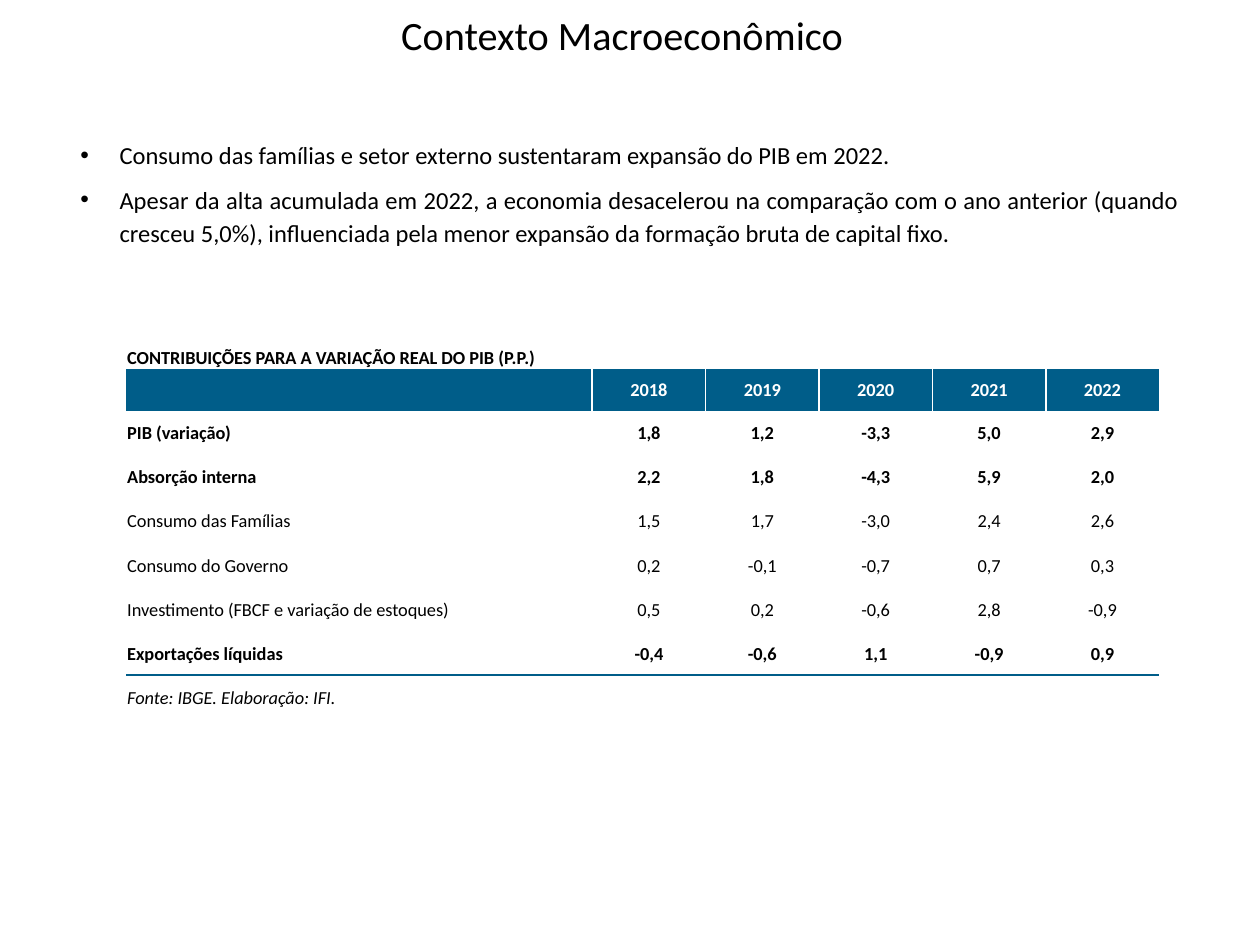
from lxml.etree import SubElement
from pptx import Presentation
from pptx.dml.color import RGBColor
from pptx.enum.text import MSO_ANCHOR as Anchor, PP_ALIGN as Align
from pptx.oxml.ns import qn
from pptx.util import Inches, Pt

BLUE, WHITE, BLACK = "005D89", "FFFFFF", "000000"


def style(para, size, color=BLACK, bold=False, italic=False):
    for run in para.runs:
        font = run.font
        font.name, font.size = "Calibri", Pt(size)
        font.bold, font.italic = bold, italic
        font.color.rgb = RGBColor.from_string(color)


def border(cell, side, color, width):
    """Draw one cell edge; call in the order L, R, T, B and before the fill."""
    line = SubElement(cell._tc.get_or_add_tcPr(), qn(f"a:ln{side}"), w=str(Pt(width)))
    if color:
        fill = SubElement(line, qn("a:solidFill"))
        SubElement(fill, qn("a:srgbClr"), val=color)
    else:
        SubElement(line, qn("a:noFill"))


prs = Presentation()
prs.slide_width, prs.slide_height = Inches(10), Inches(7.5)
slide = prs.slides.add_slide(prs.slide_layouts[5])

# Title
title = slide.shapes.title
title.left, title.top = Inches(2.96), Inches(0)
title.width, title.height = Inches(3.96), Inches(0.59)
frame = title.text_frame
frame.text = "Contexto Macroeconômico"
frame.vertical_anchor = Anchor.MIDDLE
para = frame.paragraphs[0]
para.alignment, para.line_spacing = Align.CENTER, 0.9
style(para, 23)

# Bullets
points = [
    "Consumo das famílias e setor externo sustentaram expansão do PIB em 2022.",
    "Apesar da alta acumulada em 2022, a economia desacelerou na comparação com o ano "
    "anterior (quando cresceu 5,0%), influenciada pela menor expansão da formação bruta "
    "de capital fixo.",
]
box = slide.shapes.add_textbox(Inches(0.54), Inches(1.03), Inches(8.92), Inches(1.35))
frame = box.text_frame
frame.word_wrap = True
frame.text = "\n".join(points)
for para in frame.paragraphs:
    para.alignment, para.line_spacing, para.space_after = Align.JUSTIFY, 1.15, Pt(6)
    props = para._p.get_or_add_pPr()
    props.set("marL", str(Inches(0.31)))
    props.set("indent", str(-Inches(0.31)))
    SubElement(props, qn("a:buFont"), typeface="Arial")
    SubElement(props, qn("a:buChar"), char="•")
    style(para, 14)

# Table: caption, header, data and source rows
rows = [
    ["CONTRIBUIÇÕES PARA A VARIAÇÃO REAL DO PIB (P.P.)"] + [""] * 5,
    ["", "2018", "2019", "2020", "2021", "2022"],
    ["PIB (variação)", "1,8", "1,2", "-3,3", "5,0", "2,9"],
    ["Absorção interna", "2,2", "1,8", "-4,3", "5,9", "2,0"],
    ["Consumo das Famílias", "1,5", "1,7", "-3,0", "2,4", "2,6"],
    ["Consumo do Governo", "0,2", "-0,1", "-0,7", "0,7", "0,3"],
    ["Investimento (FBCF e variação de estoques)", "0,5", "0,2", "-0,6", "2,8", "-0,9"],
    ["Exportações líquidas", "-0,4", "-0,6", "1,1", "-0,9", "0,9"],
    ["Fonte: IBGE. Elaboração: IFI."] + [""] * 5,
]
HEAD, LAST, SOURCE = 1, 7, 8
BOLD = {0, 1, 2, 3, 7}
table = slide.shapes.add_table(
    len(rows), 6, Inches(1), Inches(2.6), Inches(8.2), Inches(3.11)).table
table.first_row = table.horz_banding = False
for c, col in enumerate(table.columns):
    col.width = Inches(0.9 if c else 3.7)

for r, row in enumerate(rows):
    table.rows[r].height = Inches(0.33 if r <= HEAD else 0.35)
    for c, text in enumerate(row):
        cell = table.cell(r, c)
        cell.margin_left = cell.margin_right = cell.margin_top = Inches(0.01)
        cell.margin_bottom = 0
        cell.vertical_anchor = Anchor.MIDDLE if r else Anchor.BOTTOM
        inner = HEAD <= r <= LAST
        border(cell, "L", WHITE if inner and c else None, 1)
        border(cell, "R", WHITE if inner and c < 5 else None, 1)
        if r == SOURCE:
            border(cell, "T", BLUE, 1.5)
        else:
            border(cell, "T", WHITE if r > HEAD + 1 else None, 1)
        if r == LAST:
            border(cell, "B", BLUE, 1.5)
        else:
            border(cell, "B", WHITE if HEAD < r < LAST else None, 1)
        cell.fill.solid()
        cell.fill.fore_color.rgb = RGBColor.from_string(BLUE if r == HEAD else WHITE)
        cell.text_frame.text = text
        para = cell.text_frame.paragraphs[0]
        para.alignment = Align.CENTER if c else Align.LEFT
        style(para, 10.5, WHITE if r == HEAD else BLACK, r in BOLD, r == SOURCE)
table.cell(0, 0).merge(table.cell(0, 5))

prs.save("out.pptx")
